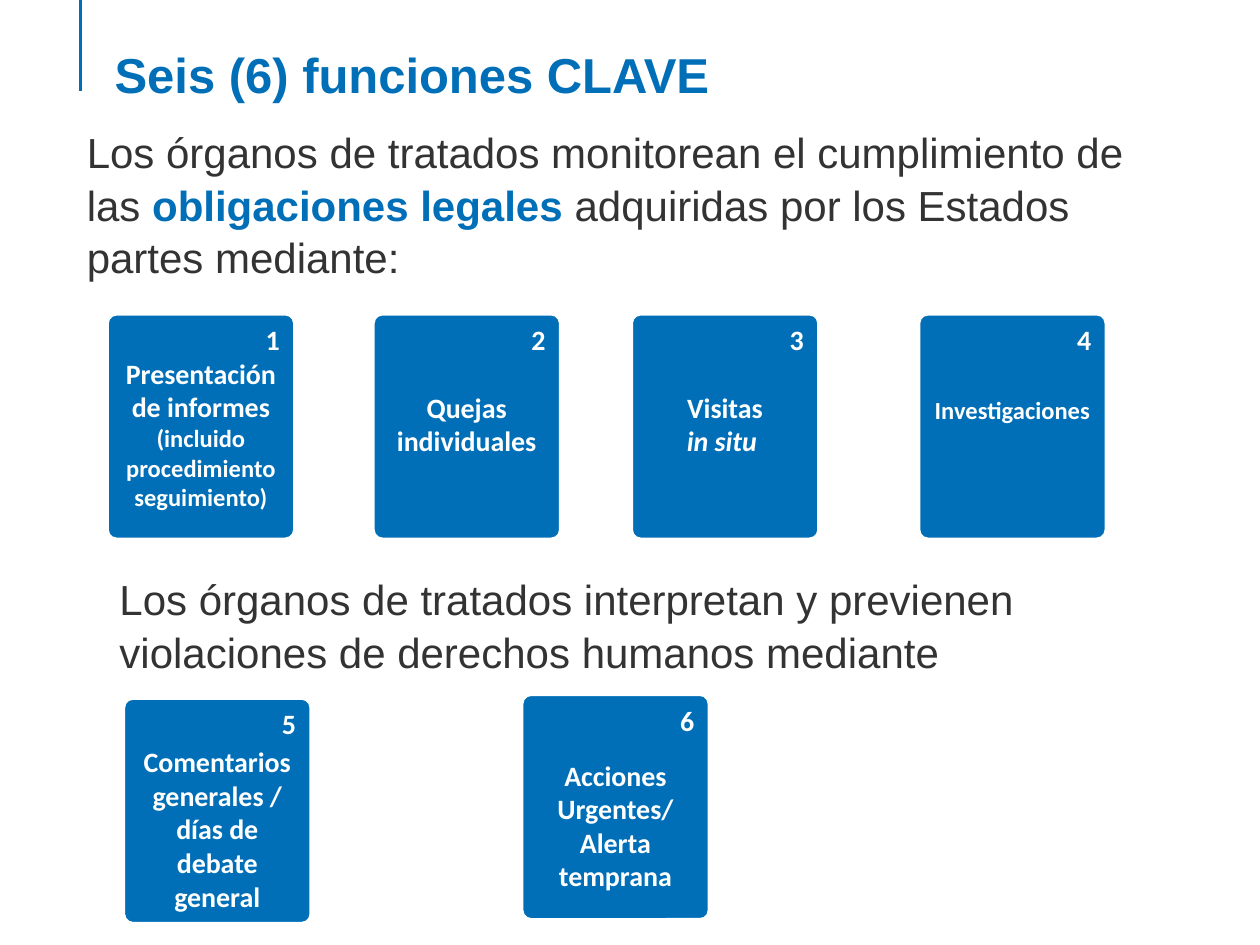
from dataclasses import dataclass

from lxml import etree
from pptx import Presentation
from pptx.dml.color import RGBColor
from pptx.enum.shapes import MSO_CONNECTOR, MSO_SHAPE
from pptx.enum.text import MSO_ANCHOR, MSO_AUTO_SIZE, PP_ALIGN
from pptx.oxml.ns import qn
from pptx.util import Inches, Pt

LEFT, CENTER, RIGHT = PP_ALIGN.LEFT, PP_ALIGN.CENTER, PP_ALIGN.RIGHT
TOP = MSO_ANCHOR.TOP
GROW, FIXED = MSO_AUTO_SIZE.SHAPE_TO_FIT_TEXT, MSO_AUTO_SIZE.NONE
ROUNDED, STRAIGHT = MSO_SHAPE.ROUNDED_RECTANGLE, MSO_CONNECTOR.STRAIGHT
SLIDE_W, SLIDE_H = Inches(10), Inches(7.5)
COLUMN, ROW = SLIDE_W / 100, SLIDE_H / 75
CARD_COLUMNS, CARD_ROWS = 14.9, 17.9


@dataclass(frozen=True)
class Theme:
    blue: RGBColor = RGBColor.from_string("006FB7")
    ink: RGBColor = RGBColor.from_string("333333")
    white: RGBColor = RGBColor.from_string("FFFFFF")
    prose_font: str = "Arial"
    card_font: str = "Calibri"
    title: int = 28
    body: int = 24
    card: int = 16
    detail: int = 14
    stroke: int = 2


@dataclass(frozen=True)
class Box:
    column: float
    row: float
    columns: float
    rows: float

    def emu(self):
        return (round(self.column * COLUMN), round(self.row * ROW),
                round(self.columns * COLUMN), round(self.rows * ROW))


@dataclass(frozen=True)
class Card:
    number: int
    column: float
    drop: float
    gap: float
    lines: tuple


THEME = Theme()

MONITORING = (
    Card(1, 0, 0, 0, ((("Presentación de informes ", THEME.card, False),
                       ("(incluido procedimiento seguimiento)", THEME.detail, False)),)),
    Card(2, 21.1, 0, 19.5, ((("Quejas individuales", THEME.card, False),),)),
    Card(3, 41.6, 0, 19.5, ((("Visitas", THEME.card, False),),
                            (("in situ ", THEME.card, True),))),
    Card(4, 64.4, 0, 22, ((("Investigaciones", THEME.detail, False),),)),
)
PREVENTION = (
    Card(5, 0, 0.3, 2.4,
         ((("Comentarios generales / días de debate general", THEME.card, False),),)),
    Card(6, 31.6, 0, 12.2,
         ((("Acciones Urgentes/ Alerta temprana", THEME.card, False),),)),
)


def add_run(paragraph, text, font, size, color, bold=False, italic=False):
    run = paragraph.add_run()
    run.text = text
    run.font.name, run.font.size = font, Pt(size)
    run.font.color.rgb = color
    run.font.bold, run.font.italic = bold, italic


def prepare_frame(frame, auto_size=FIXED):
    frame.word_wrap = True
    frame.auto_size = auto_size
    frame.vertical_anchor = TOP


def place_accent(slide, box):
    left, top, width, height = box.emu()
    accent = slide.shapes.add_connector(STRAIGHT, left, top, left + width, top + height)
    accent.line.color.rgb = THEME.blue
    accent.line.width = Pt(THEME.stroke)
    etree.SubElement(accent._element.spPr, qn("a:effectLst"))


def place_title(slide, box, text):
    title = slide.shapes.title
    title.left, title.top, title.width, title.height = box.emu()
    prepare_frame(title.text_frame)
    heading = title.text_frame.paragraphs[0]
    heading.alignment = LEFT
    add_run(heading, text, THEME.prose_font, THEME.title, THEME.blue, True)


def place_statement(slide, box, parts):
    frame = slide.shapes.add_textbox(*box.emu()).text_frame
    prepare_frame(frame, GROW)
    statement = frame.paragraphs[0]
    statement.line_spacing = 1.04
    for text, key_term in parts:
        color = THEME.blue if key_term else THEME.ink
        add_run(statement, text, THEME.prose_font, THEME.body, color, key_term)


def place_card(slide, box, card):
    tile = slide.shapes.add_shape(ROUNDED, *box.emu())
    tile.adjustments[0] = 0.05
    tile.shadow.inherit = False
    tile.fill.solid()
    tile.fill.fore_color.rgb = THEME.blue
    tile.line.color.rgb = THEME.white
    tile.line.width = Pt(THEME.stroke)
    frame = tile.text_frame
    prepare_frame(frame)
    number = frame.paragraphs[0]
    number.alignment = RIGHT
    add_run(number, str(card.number), THEME.card_font, THEME.card, THEME.white, True)
    for index, line in enumerate(card.lines):
        label = frame.add_paragraph()
        label.alignment = CENTER
        label.space_before = Pt(0 if index else card.gap)
        for text, size, italic in line:
            add_run(label, text, THEME.card_font, size, THEME.white, True, italic)


def place_cards(slide, box, cards):
    for card in cards:
        place_card(slide, Box(box.column + card.column, box.row + card.drop,
                              CARD_COLUMNS, CARD_ROWS), card)


def build_functions_slide(deck):
    slide = deck.slides.add_slide(deck.slide_layouts[5])
    place_accent(slide, Box(6.4, 0, 0, 7.2))
    place_title(slide, Box(8.1, 3, 82.7, 7.7), "Seis (6) funciones CLAVE")
    place_statement(slide, Box(5.9, 9.4, 88.2, 13.1), (
        ("Los órganos de tratados monitorean el cumplimiento de las ", False),
        ("obligaciones legales ", True),
        ("adquiridas por los Estados partes mediante:", False)))
    place_cards(slide, Box(8.5, 24.9, 79.3, CARD_ROWS), MONITORING)
    place_statement(slide, Box(8.5, 44.9, 79.3, 9.1), (
        ("Los órganos de tratados interpretan y previenen violaciones "
         "de derechos humanos mediante", False),))
    place_cards(slide, Box(9.8, 55.1, 46.5, 18.2), PREVENTION)


def main():
    deck = Presentation()
    deck.slide_width, deck.slide_height = SLIDE_W, SLIDE_H
    build_functions_slide(deck)
    deck.save("out.pptx")


if __name__ == "__main__":
    main()
